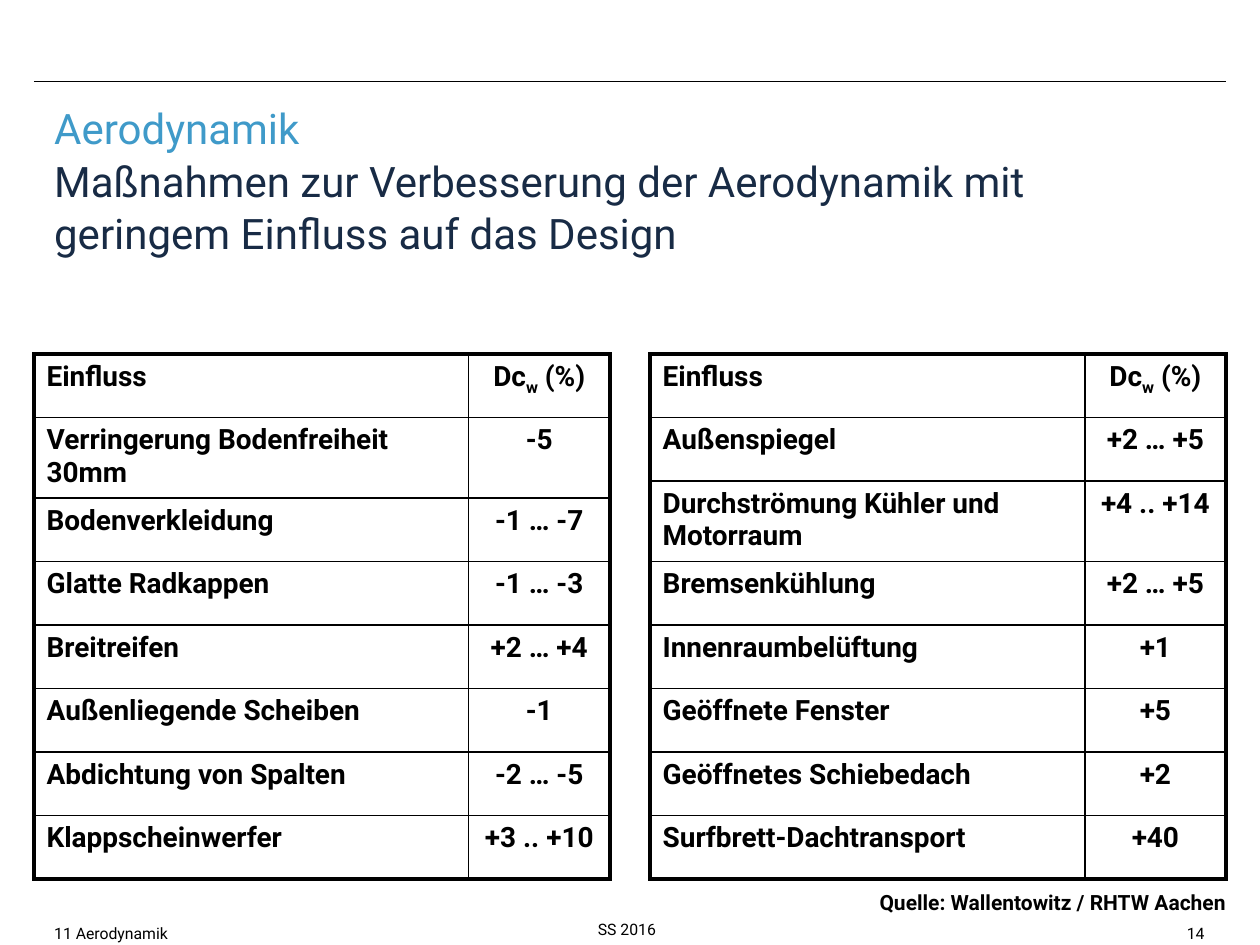
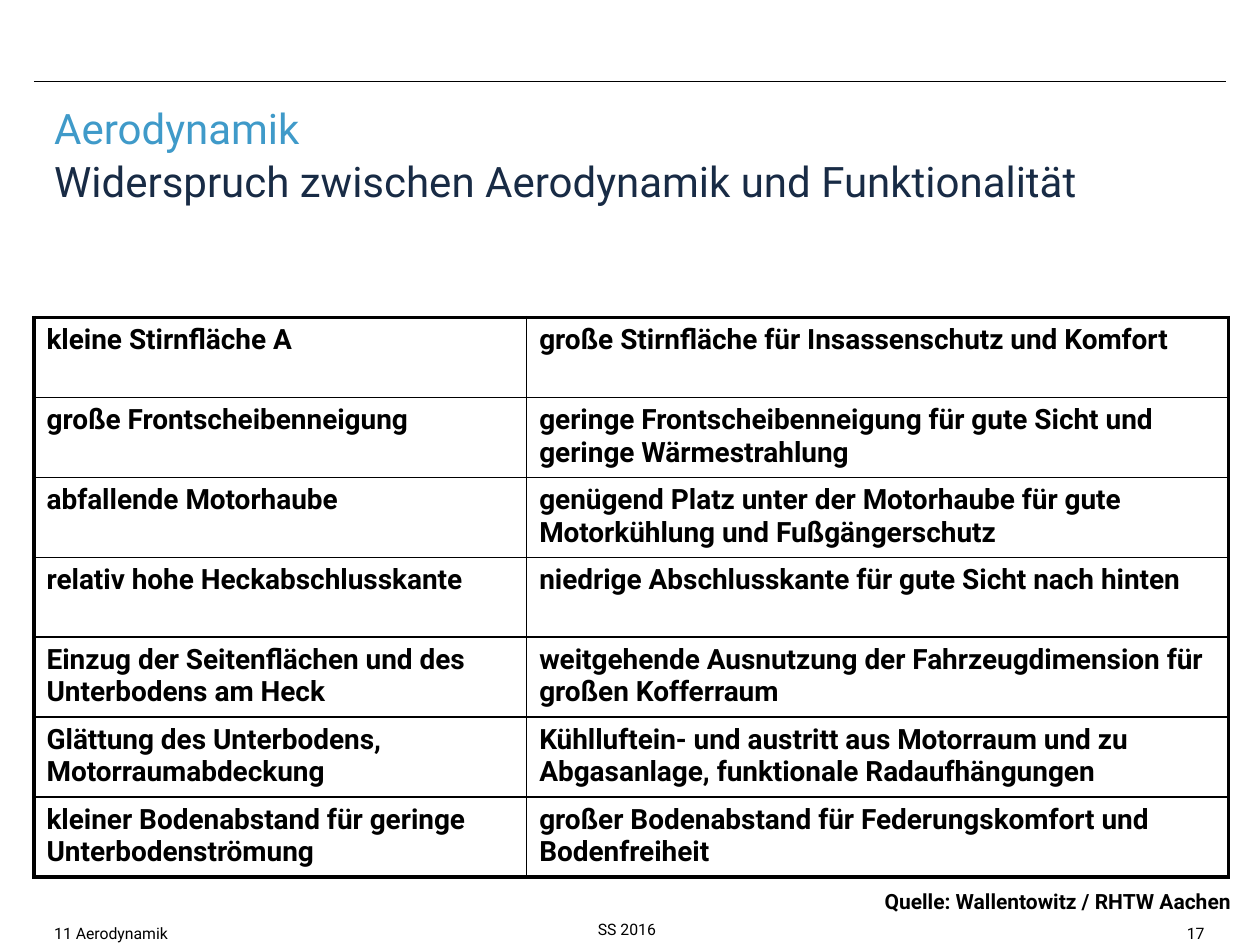
from lxml import etree
from pptx import Presentation
from pptx.dml.color import RGBColor
from pptx.enum.shapes import MSO_CONNECTOR
from pptx.enum.text import MSO_ANCHOR as Anchor, MSO_AUTO_SIZE as Auto, PP_ALIGN as Align
from pptx.oxml.ns import qn
from pptx.util import Inches, Pt

BLACK = RGBColor(0x00, 0x00, 0x00)
BLUE = RGBColor(0x3F, 0x9A, 0xC9)
NAVY = RGBColor(0x18, 0x2B, 0x45)
FONT = "Roboto"
THIN, THICK = Pt(1), Pt(2.25)

deck = Presentation()
deck.slide_width, deck.slide_height = Inches(10), Inches(7.5)
COL, ROW = deck.slide_width / 100, deck.slide_height / 100
EDGE, INDENT = 2.7, 4.3
TALL = 8.53  # row holding two lines of text

HEAD = ("Einfluss", "Dc|w| (%)")  # text between bars is subscript
CUTS = [
    HEAD,
    ("Verringerung Bodenfreiheit 30mm", "-5"),
    ("Bodenverkleidung", "-1 … -7"),
    ("Glatte Radkappen", "-1 … -3"),
    ("Breitreifen", "+2 … +4"),
    ("Außenliegende Scheiben", "-1"),
    ("Abdichtung von Spalten", "-2 … -5"),
    ("Klappscheinwerfer", "+3 .. +10"),
]
GAINS = [
    HEAD,
    ("Außenspiegel", "+2 … +5"),
    ("Durchströmung Kühler und Motorraum", "+4 .. +14"),
    ("Bremsenkühlung", "+2 … +5"),
    ("Innenraumbelüftung", "+1"),
    ("Geöffnete Fenster", "+5"),
    ("Geöffnetes Schiebedach", "+2"),
    ("Surfbrett-Dachtransport", "+40"),
]
CLASHES = [
    ("kleine Stirnfläche A", "große Stirnfläche für Insassenschutz und Komfort"),
    ("große Frontscheibenneigung",
     "geringe Frontscheibenneigung für gute Sicht und geringe Wärmestrahlung"),
    ("abfallende Motorhaube",
     "genügend Platz unter der Motorhaube für gute Motorkühlung und Fußgängerschutz"),
    ("relativ hohe Heckabschlusskante",
     "niedrige Abschlusskante für gute Sicht nach hinten"),
    ("Einzug der Seitenflächen und des Unterbodens am Heck",
     "weitgehende Ausnutzung der Fahrzeugdimension für großen Kofferraum"),
    ("Glättung des Unterbodens, Motorraumabdeckung",
     "Kühlluftein- und austritt aus Motorraum und zu Abgasanlage, "
     "funktionale Radaufhängungen"),
    ("kleiner Bodenabstand für geringe Unterbodenströmung",
     "großer Bodenabstand für Federungskomfort und Bodenfreiheit"),
]

# Table: left, top, height, column widths, index of the tall row, alignment of column 2, rows
SLIDES = [
    ("Maßnahmen zur Verbesserung der Aerodynamik mit geringem Einfluss auf das Design",
     "14", 91.4, 22.93, (66.8, 94.13),
     [(EDGE, 37.47, 55.6, (34.5, 11.2), 1, Align.CENTER, CUTS),
      (51.6, 37.47, 55.6, (34.5, 11.2), 2, Align.CENTER, GAINS)]),
    ("Widerspruch zwischen Aerodynamik und Funktionalität",
     "17", 85.3, 17.47, (67.2, 94),
     [(EDGE, 33.6, 59.2, (39.1, 55.7), None, Align.LEFT, CLASHES)]),
]


def area(x, y, wide, high):
    """Turn percent of the slide into left, top, width and height."""
    return [round(n) for n in (x * COL, y * ROW, wide * COL, high * ROW)]


def style(par, size, align, bold=False):
    par.alignment = align
    par.font.name, par.font.size, par.font.bold = FONT, Pt(size), bold
    par.font.color.rgb = BLACK


for topic, number, wide, high, source, grids in SLIDES:
    slide = deck.slides.add_slide(deck.slide_layouts[5])

    rule = slide.shapes.add_connector(
        MSO_CONNECTOR.STRAIGHT, round(EDGE * COL), round(8.67 * ROW),
        round((100 - EDGE) * COL), round(8.67 * ROW))
    rule.line.color.rgb, rule.line.width = BLACK, Pt(0.5)
    etree.SubElement(rule._element.spPr, qn("a:effectLst"))

    title = slide.shapes.title
    title.left, title.top, title.width, title.height = area(INDENT, 10.67, wide, high)
    frame = title.text_frame
    frame.auto_size, frame.vertical_anchor, frame.word_wrap = Auto.NONE, Anchor.TOP, True
    frame.margin_left = frame.margin_top = frame.margin_right = 0
    frame.margin_bottom = Inches(0.47)
    par = frame.paragraphs[0]
    style(par, 24, Align.LEFT)
    par.line_spacing = Pt(30)
    for text, color in (("Aerodynamik", BLUE), (topic, NAVY)):
        if par.runs:
            par.add_line_break()
        run = par.add_run()
        run.text, run.font.color.rgb = text, color

    for text, x, y, span, align, size, bold in (
        ("SS 2016", 45, 97.33, 9.5, Align.CENTER, 9, False),
        ("11 Aerodynamik", INDENT, 97.73, 22.8, Align.LEFT, 9, False),
        (number, 76, 97.73, 19.6, Align.RIGHT, 9, False),
        ("Quelle: Wallentowitz / RHTW Aachen", *source, 30.5, Align.RIGHT, 12, True),
    ):
        frame = slide.shapes.add_textbox(*area(x, y, span, 2.27)).text_frame
        frame.margin_left = frame.margin_top = frame.margin_right = frame.margin_bottom = 0
        frame.word_wrap = True
        frame.vertical_anchor = Anchor.TOP if bold else Anchor.MIDDLE
        par = frame.paragraphs[0]
        par.text = text
        style(par, size, align, bold)
        if not bold:
            par.line_spacing = 0.9

    for x, y, high, spans, tall, align, rows in grids:
        count = len(rows)
        table = slide.shapes.add_table(count, 2, *area(x, y, sum(spans), high)).table
        table.first_row = table.horz_banding = False
        for col, span in zip(table.columns, spans):
            col.width = round(span * COL)
        even = high / count if tall is None else (high - TALL) / (count - 1)
        for i, row in enumerate(rows):
            table.rows[i].height = round((TALL if i == tall else even) * ROW)
            for j, text in enumerate(row):
                cell = table.cell(i, j)
                par = cell.text_frame.paragraphs[0]
                style(par, 16, align if j else Align.LEFT, True)
                for k, part in enumerate(text.split("|")):
                    run = par.add_run()
                    run.text = part
                    if k % 2:
                        run.font._element.set("baseline", "-25000")
                props = cell._tc.get_or_add_tcPr()
                for side, outer in (("L", j == 0), ("R", j == 1),
                                    ("T", i == 0), ("B", i == count - 1)):
                    line = etree.SubElement(props, qn("a:ln" + side),
                                            w=str(THICK if outer else THIN))
                    fill = etree.SubElement(line, qn("a:solidFill"))
                    etree.SubElement(fill, qn("a:srgbClr"), val=str(BLACK))
                cell.fill.background()

deck.save("out.pptx")
